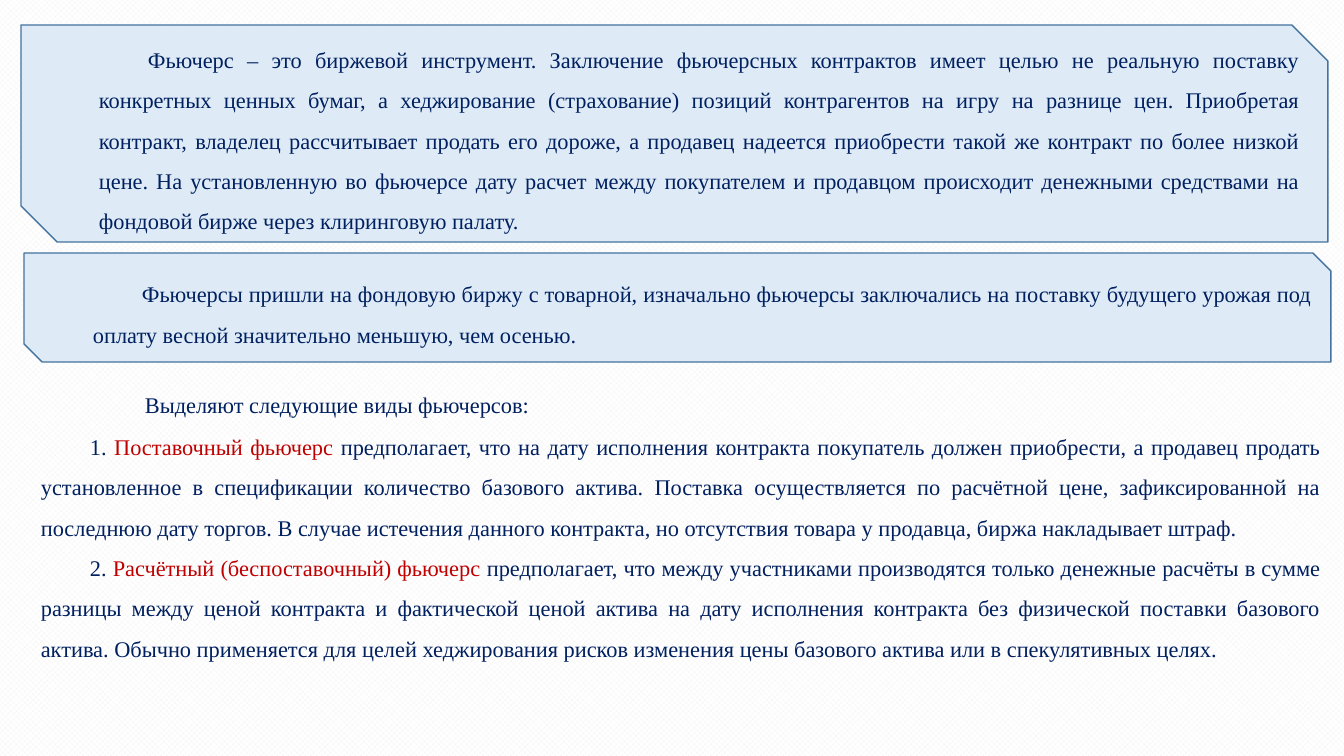
from pptx import Presentation
from pptx.dml.color import RGBColor
from pptx.enum.dml import MSO_PATTERN
from pptx.enum.shapes import MSO_SHAPE
from pptx.enum.text import MSO_ANCHOR, MSO_AUTO_SIZE, PP_ALIGN
from pptx.util import Pt

PX = 9144000 / 1008
THEME = {
    "font": "Times New Roman",
    "size": Pt(16),
    "text": RGBColor.from_string("002060"),
    "term": RGBColor.from_string("C00000"),
    "panel": RGBColor.from_string("DEEBF7"),
    "edge": RGBColor.from_string("43739E"),
    "dots": RGBColor.from_string("F2F2F2"),
    "page": RGBColor.from_string("FFFFFF"),
}


def px(n):
    return round(n * PX)


def write(text, frame, first=True, after=8, term=None):
    para = frame.paragraphs[0] if first else frame.add_paragraph()
    props = para._p.get_or_add_pPr()
    props.set("marL", str(px(50)))
    props.set("indent", str(px(49)))
    para.alignment = PP_ALIGN.JUSTIFY
    para.line_spacing = 1.5
    para.space_before = Pt(0)
    para.space_after = Pt(after)
    parts = text.partition(term) if term else (text,)
    for part in parts:
        run = para.add_run()
        run.text = part
        run.font.name = THEME["font"]
        run.font.size = THEME["size"]
        run.font.color.rgb = THEME["term"] if part == term else THEME["text"]


deck = Presentation()
deck.slide_width = px(1344)
deck.slide_height = px(756)
slide = deck.slides.add_slide(deck.slide_layouts[6])
back = slide.background.fill
back.patterned()
back.pattern = MSO_PATTERN.OUTLINED_DIAMOND
back.fore_color.rgb = THEME["dots"]
back.back_color.rgb = THEME["page"]

panels = [
    ((21, 25, 1307, 217),
     "Фьючерс – это биржевой инструмент. Заключение фьючерсных контрактов имеет целью "
     "не реальную поставку конкретных ценных бумаг, а хеджирование (страхование) позиций "
     "контрагентов на игру на разнице цен. Приобретая контракт, владелец рассчитывает "
     "продать его дороже, а продавец надеется приобрести такой же контракт по более "
     "низкой цене. На установленную во фьючерсе дату расчет между покупателем и продавцом "
     "происходит денежными средствами на фондовой бирже через клиринговую палату."),
    ((24, 253, 1307, 109),
     "Фьючерсы пришли на фондовую биржу с товарной, изначально фьючерсы заключались на "
     "поставку будущего урожая под оплату весной значительно меньшую, чем осенью."),
]
for box, text in panels:
    panel = slide.shapes.add_shape(MSO_SHAPE.SNIP_2_DIAG_RECTANGLE, *map(px, box))
    panel.shadow.inherit = False
    panel.fill.solid()
    panel.fill.fore_color.rgb = THEME["panel"]
    panel.line.color.rgb = THEME["edge"]
    panel.line.width = Pt(1)
    panel.text_frame.word_wrap = True
    panel.text_frame.vertical_anchor = MSO_ANCHOR.MIDDLE
    write(text, panel.text_frame)

notes = [
    ((36, 373, 672, 46), [
        ("Выделяют следующие виды фьючерсов:", None, 8),
    ]),
    ((-19, 415, 1350, 250), [
        ("1. Поставочный фьючерс предполагает, что на дату исполнения контракта покупатель "
         "должен приобрести, а продавец продать установленное в спецификации количество "
         "базового актива. Поставка осуществляется по расчётной цене, зафиксированной на "
         "последнюю дату торгов. В случае истечения данного контракта, но отсутствия товара "
         "у продавца, биржа накладывает штраф.", "Поставочный фьючерс", 0),
        ("2. Расчётный (беспоставочный) фьючерс предполагает, что между участниками "
         "производятся только денежные расчёты в сумме разницы между ценой контракта и "
         "фактической ценой актива на дату исполнения контракта без физической поставки "
         "базового актива. Обычно применяется для целей хеджирования рисков изменения цены "
         "базового актива или в спекулятивных целях.",
         "Расчётный (беспоставочный) фьючерс", 8),
    ]),
]
for box, items in notes:
    frame = slide.shapes.add_textbox(*map(px, box)).text_frame
    frame.word_wrap = True
    frame.auto_size = MSO_AUTO_SIZE.SHAPE_TO_FIT_TEXT
    for i, (text, term, after) in enumerate(items):
        write(text, frame, first=i == 0, after=after, term=term)

deck.save("out.pptx")
